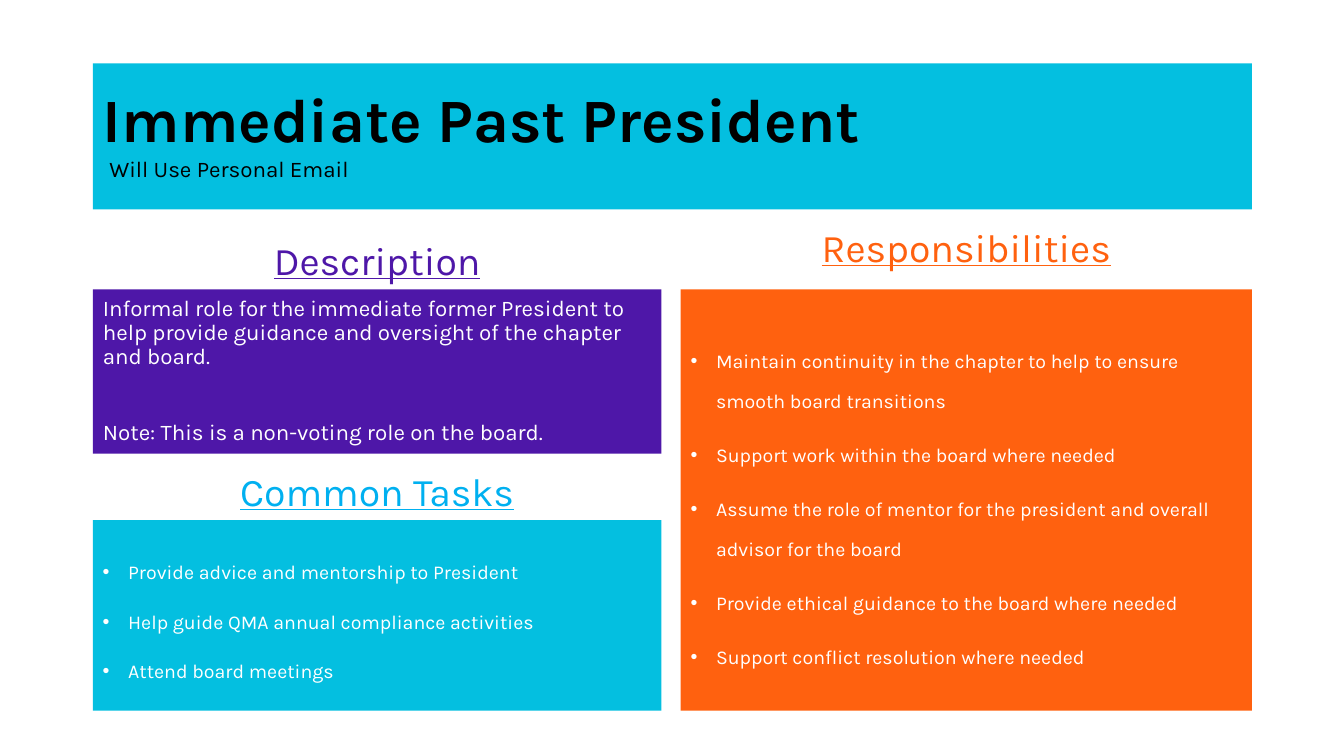
from pptx import Presentation
from pptx.dml.color import RGBColor
from pptx.enum.shapes import MSO_SHAPE
from pptx.enum.text import MSO_ANCHOR, MSO_AUTO_SIZE, PP_ALIGN
from pptx.oxml.ns import qn
from pptx.util import Cm, Pt
from lxml.etree import SubElement

COLORS = {
    "cyan": "04BFE0",
    "sky": "00B0F0",
    "purple": "4E17A8",
    "orange": "FF610F",
    "white": "FFFFFF",
    "black": "000000",
}
FONT = "Karla"
COMPARISON_LAYOUT = 4
LEFT, TOP_ROW = 2.34, 7.29
LEFT_WIDTH = 14.33
RIGHT, RIGHT_WIDTH = 17.15, 14.4


def place(shape, box):
    shape.left, shape.top, shape.width, shape.height = (Cm(length) for length in box)


def paint(shape, color):
    shape.fill.solid()
    shape.fill.fore_color.rgb = RGBColor.from_string(COLORS[color])
    shape.line.fill.background()


def prepare_frame(shape, anchor):
    frame = shape.text_frame
    frame.word_wrap = True
    frame.auto_size = MSO_AUTO_SIZE.NONE
    frame.vertical_anchor = anchor
    return frame


def add_run(paragraph, text, size, color, bold=False, underline=False):
    run = paragraph.add_run()
    run.text = text
    font = run.font
    font.name, font.size, font.bold = FONT, Pt(size), bold
    if underline:
        font.underline = True
    font.color.rgb = RGBColor.from_string(COLORS[color])


def format_paragraph(paragraph, align, line_spacing, space_before, bulleted=False):
    paragraph.alignment = align
    paragraph.line_spacing = line_spacing
    paragraph.space_before = Pt(space_before)
    paragraph.space_after = Pt(0)
    properties = paragraph._p.get_or_add_pPr()
    indent = Cm(0.64) if bulleted else 0
    properties.set("marL", str(indent))
    properties.set("indent", str(-indent))
    if bulleted:
        SubElement(properties, qn("a:buFont"), typeface="Arial")
        SubElement(properties, qn("a:buChar"), char="•")
    else:
        SubElement(properties, qn("a:buNone"))


def build_banner(title, box, role, note):
    """Title bar with the role and a small note under it."""
    place(title, box)
    paint(title, "cyan")
    paragraph = prepare_frame(title, MSO_ANCHOR.MIDDLE).paragraphs[0]
    format_paragraph(paragraph, PP_ALIGN.LEFT, 0.9, 0)
    add_run(paragraph, role, 44, "black", bold=True)
    paragraph.add_line_break()
    add_run(paragraph, " ", 18, "black", bold=True)
    add_run(paragraph, note, 16, "black")


def build_section(heading, panel, box, title, title_color, panel_color, lines,
                  size=14, line_spacing=1.5, gap=10, bulleted=True, lift=0):
    """Filled panel in the box, with its heading standing on top of it."""
    left, top, width, height = box
    heading_height = 2.29
    place(heading, (left, top - heading_height - lift, width, heading_height))
    paragraph = prepare_frame(heading, MSO_ANCHOR.BOTTOM).paragraphs[0]
    format_paragraph(paragraph, PP_ALIGN.CENTER, 0.9, 10)
    add_run(paragraph, title, 28, title_color, underline=True)

    place(panel, box)
    paint(panel, panel_color)
    frame = prepare_frame(panel, MSO_ANCHOR.MIDDLE)
    for index, line in enumerate(lines):
        paragraph = frame.add_paragraph() if index else frame.paragraphs[0]
        format_paragraph(paragraph, PP_ALIGN.LEFT, line_spacing,
                         gap if index else 10, bulleted)
        add_run(paragraph, line, size, "white")


def build_role_slide(presentation):
    slide = presentation.slides.add_slide(presentation.slide_layouts[COMPARISON_LAYOUT])
    title, left_heading, left_panel, right_heading, right_panel = slide.placeholders

    build_banner(title, (LEFT, 1.6, 29.21, 3.68),
                 "Immediate Past President", "Will Use Personal Email")

    # Description
    build_section(
        left_heading, left_panel, (LEFT, TOP_ROW, LEFT_WIDTH, 4.14),
        "Description", "purple", "purple",
        ["Informal role for the immediate former President to help provide "
         "guidance and oversight of the chapter and board.",
         "Note: This is a non-voting role on the board."],
        size=16, line_spacing=0.9, gap=37, bulleted=False)

    # Responsibilities
    build_section(
        right_heading, right_panel, (RIGHT, TOP_ROW, RIGHT_WIDTH, 10.62),
        "Responsibilities", "orange", "orange",
        ["Maintain continuity in the chapter to help to ensure smooth board transitions",
         "Support work within the board where needed",
         "Assume the role of mentor for the president and overall advisor for the board",
         "Provide ethical guidance to the board where needed",
         "Support conflict resolution where needed"],
        line_spacing=1.7, lift=0.33)

    # Common tasks
    tasks_box = (LEFT, 13.11, LEFT_WIDTH, 4.8)
    tasks_panel = slide.shapes.add_shape(
        MSO_SHAPE.RECTANGLE, *(Cm(length) for length in tasks_box))
    tasks_panel.shadow.inherit = False
    tasks_heading = slide.shapes.add_textbox(0, 0, Cm(1), Cm(1))
    build_section(
        tasks_heading, tasks_panel, tasks_box, "Common Tasks", "sky", "cyan",
        ["Provide advice and mentorship to President",
         "Help guide QMA annual compliance activities",
         "Attend board meetings"])


def main():
    presentation = Presentation()
    presentation.slide_width, presentation.slide_height = Cm(33.87), Cm(19.05)
    build_role_slide(presentation)
    presentation.save("out.pptx")


if __name__ == "__main__":
    main()
